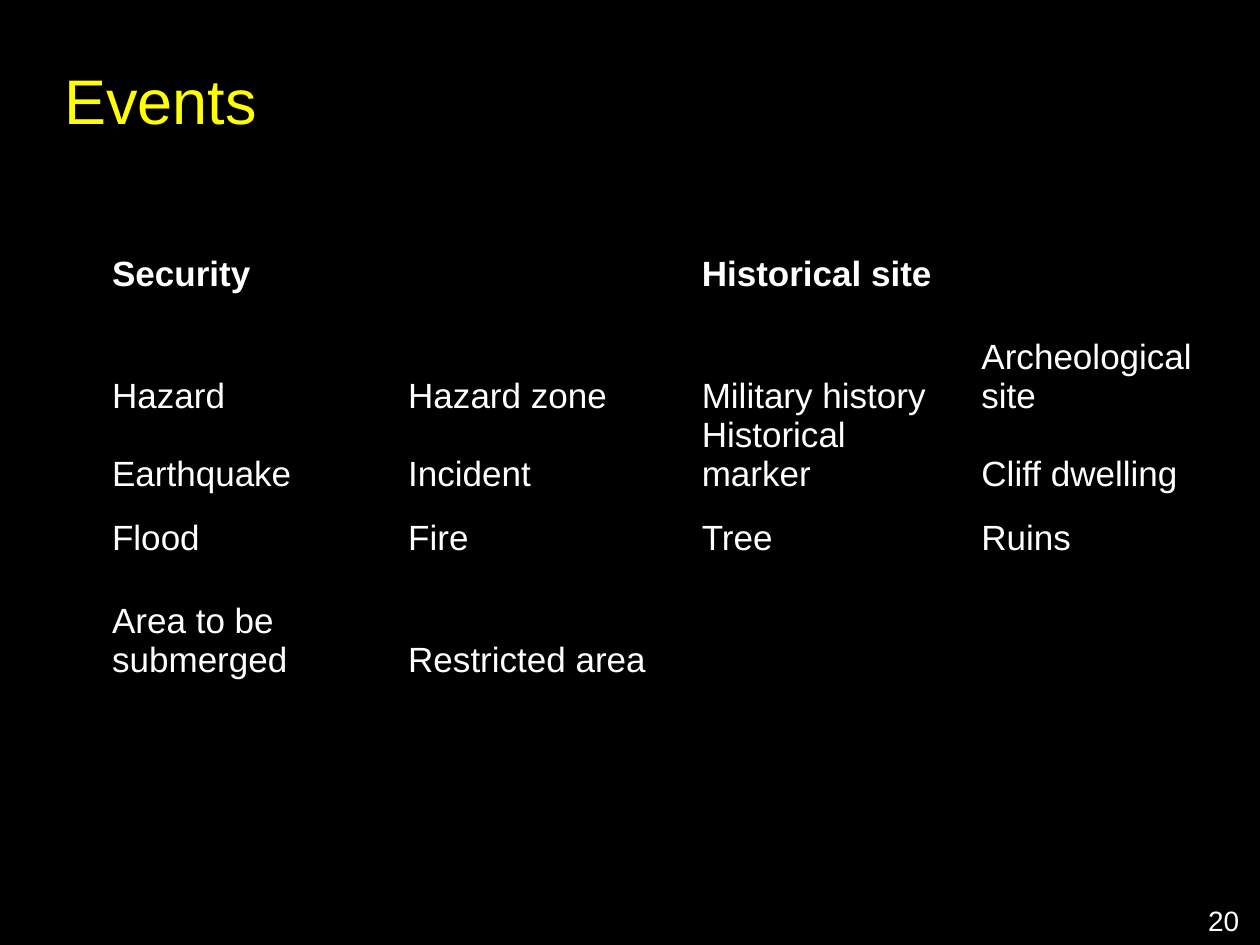
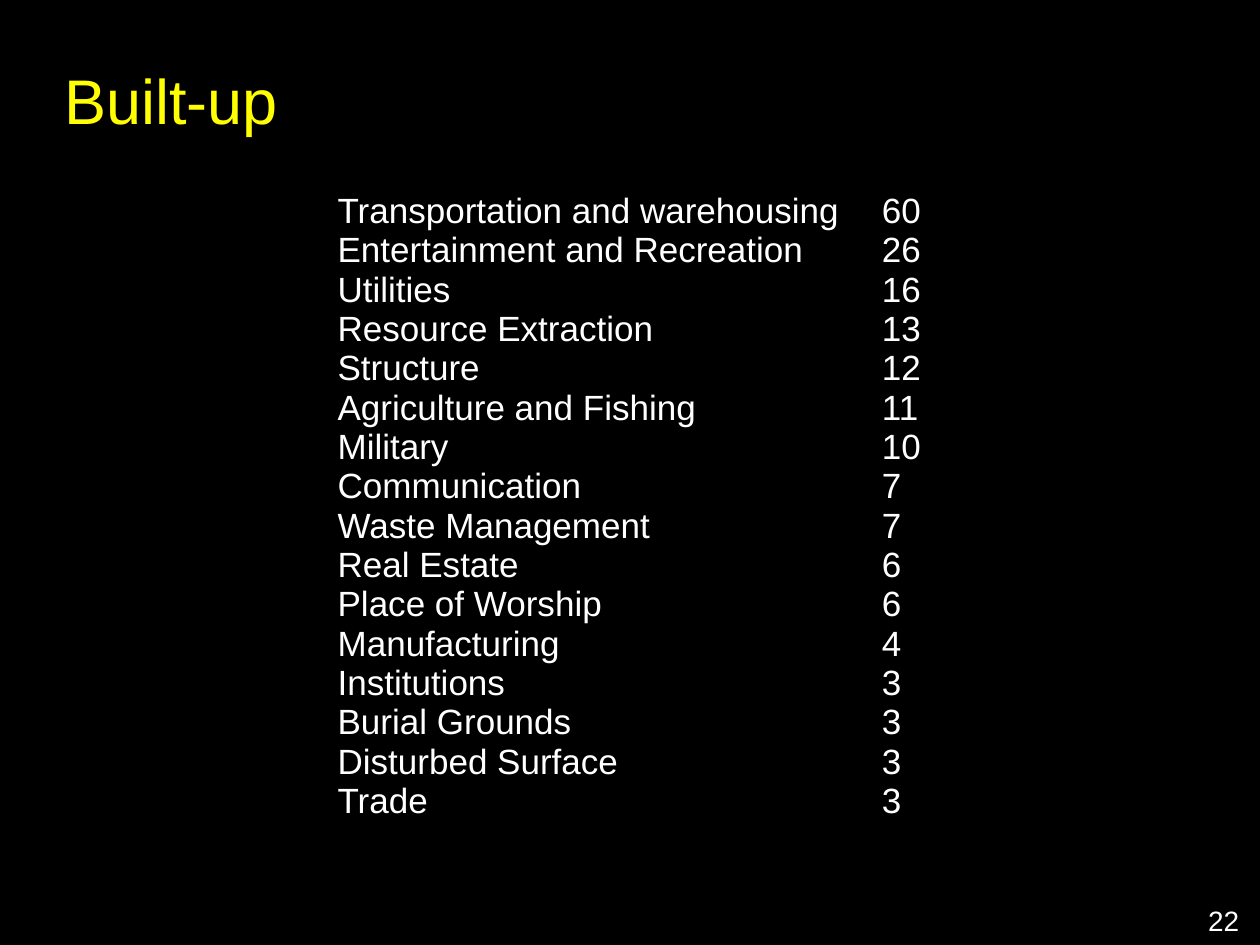
from pptx import Presentation
from pptx.dml.color import RGBColor
from pptx.enum.text import MSO_ANCHOR, PP_ALIGN
from pptx.util import Inches, Pt

BLACK, WHITE, YELLOW = "000000", "FFFFFF", "FFFF00"
NO_STYLE = "{2D5ABB26-0587-4C30-8999-92F81FD0307C}"


def add_text(tf, text, size, color, bold=False, align=PP_ALIGN.LEFT):
    p = tf.paragraphs[0]
    p.alignment = align
    r = p.add_run()
    r.text = text
    r.font.name = "Arial"
    r.font.size = Pt(size)
    r.font.bold = bold
    r.font.color.rgb = RGBColor.from_string(color)
    return p


# Slide content
events = [
    ("Security", "", "Historical site", ""),
    ("Hazard", "Hazard zone", "Military history", "Archeological site"),
    ("Earthquake", "Incident", "Historical marker", "Cliff dwelling"),
    ("Flood", "Fire", "Tree", "Ruins"),
    ("Area to be submerged", "Restricted area", "", ""),
]
built_up = [
    ("Transportation and warehousing", "60"),
    ("Entertainment and Recreation", "26"),
    ("Utilities", "16"),
    ("Resource Extraction", "13"),
    ("Structure", "12"),
    ("Agriculture and Fishing", "11"),
    ("Military", "10"),
    ("Communication", "7"),
    ("Waste Management", "7"),
    ("Real Estate", "6"),
    ("Place of Worship", "6"),
    ("Manufacturing", "4"),
    ("Institutions", "3"),
    ("Burial Grounds", "3"),
    ("Disturbed Surface", "3"),
    ("Trade", "3"),
]

# Title, page number, rows, left, top, column widths, row heights, header, alignment
slides = [
    ("Events", "20", events, 0.82, 1.82, [2.35, 2.33, 2.22, 1.95],
     [0.51, 0.97, 0.62, 0.51, 0.97], True, PP_ALIGN.LEFT),
    ("Built-up", "22", built_up, 2.61, 1.52, [4.32, 0.95],
     [5 / 16] * len(built_up), False, PP_ALIGN.JUSTIFY),
]

# Presentation with a black master background
prs = Presentation()
prs.slide_width, prs.slide_height = Inches(10), Inches(7.5)
fill = prs.slide_master.background.fill
fill.solid()
fill.fore_color.rgb = RGBColor.from_string(BLACK)

for title, number, rows, left, top, widths, heights, header, align in slides:
    s = prs.slides.add_slide(prs.slide_layouts[5])

    # Page number
    sp = s.shapes.add_textbox(Inches(9.49), Inches(7.12), Inches(0.47), Inches(0.37))
    sp.text_frame.word_wrap = False
    add_text(sp.text_frame, number, 16, WHITE)

    # Title
    sp = s.shapes.title
    sp.left, sp.top, sp.width, sp.height = Inches(0.41), Inches(0.16), Inches(9), Inches(1.25)
    sp.text_frame.vertical_anchor = MSO_ANCHOR.MIDDLE
    add_text(sp.text_frame, title, 36, YELLOW)

    # Table without fills or visible borders
    frame = s.shapes.add_table(len(rows), len(widths), Inches(left), Inches(top),
                               Inches(sum(widths)), Inches(sum(heights)))
    table = frame.table
    table.first_row = header
    table.horz_banding = False
    frame._element.xpath(".//a:tableStyleId")[0].text = NO_STYLE
    for column, width in zip(table.columns, widths):
        column.width = Inches(width)
    for i, (row, height) in enumerate(zip(rows, heights)):
        table.rows[i].height = Inches(height)
        for j, text in enumerate(row):
            cell = table.cell(i, j)
            cell.fill.background()
            cell.vertical_anchor = MSO_ANCHOR.BOTTOM
            cell.margin_left = cell.margin_right = Inches(0.07)
            cell.margin_top = cell.margin_bottom = 0
            if text:
                p = add_text(cell.text_frame, text, 20, WHITE, header and i == 0, align)
                p.line_spacing = Pt(22.3)

prs.save("out.pptx")
